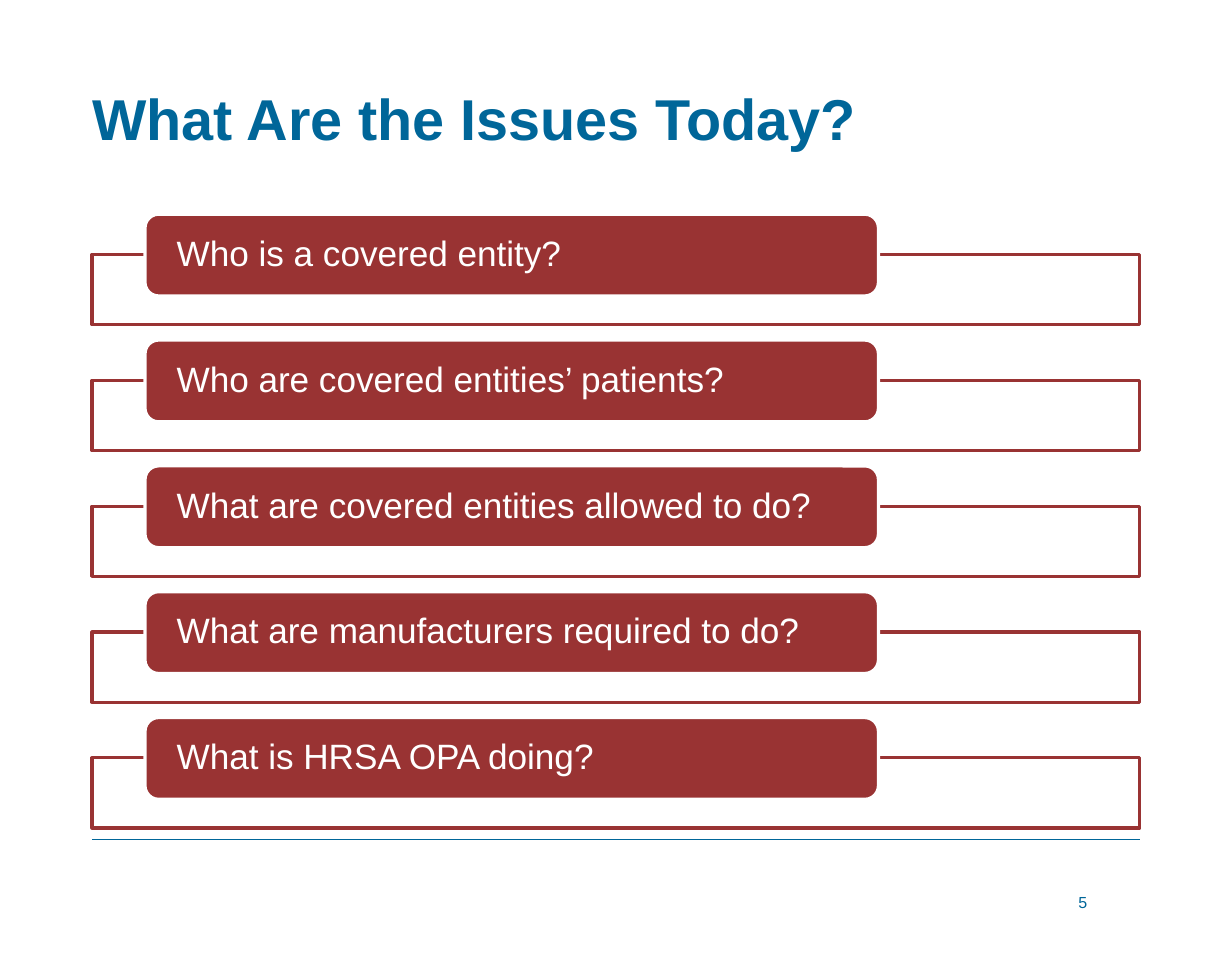
from dataclasses import dataclass

from lxml import etree
from pptx import Presentation
from pptx import util as u
from pptx.dml.color import RGBColor
from pptx.enum import shapes, text
from pptx.oxml import ns


@dataclass(frozen=True)
class Theme:
    font: str = "Arial"
    blue: str = "006699"
    red: str = "993333"
    white: str = "FFFFFF"
    title: int = 36
    body: int = 22
    small: int = 10
    rule: int = 1
    edge: int = 2


THEME = Theme()
ISSUES = [
    "Who is a covered entity?",
    "Who are covered entities’ patients?",
    "What are covered entities allowed to do?",
    "What are manufacturers required to do?",
    "What is HRSA OPA doing?",
]


def inches(*vals):
    return [u.Inches(v) for v in vals]


def write(shape, words, size, color, bold=False, align=text.PP_ALIGN.LEFT,
          anchor=text.MSO_ANCHOR.TOP, inset=(0, 0, 0, 0), space=None):
    frame = shape.text_frame
    frame.word_wrap = True
    frame.vertical_anchor = anchor
    (frame.margin_left, frame.margin_top,
     frame.margin_right, frame.margin_bottom) = inches(*inset)
    para = frame.paragraphs[0]
    para.alignment = align
    if space:
        para.line_spacing = space
    run = para.add_run()
    run.text = words
    run.font.name = THEME.font
    run.font.size = u.Pt(size)
    run.font.bold = bold
    run.font.color.rgb = RGBColor.from_string(color)


def panel(slide, kind, box, fill, line, alpha=None):
    shape = slide.shapes.add_shape(kind, *inches(*box))
    shape.shadow.inherit = False
    shape.fill.solid()
    shape.fill.fore_color.rgb = RGBColor.from_string(fill)
    shape.line.color.rgb = RGBColor.from_string(line)
    shape.line.width = u.Pt(THEME.edge)
    if alpha:
        tint = shape.fill._xPr.find(".//" + ns.qn("a:srgbClr"))
        etree.SubElement(tint, ns.qn("a:alpha"), val=str(alpha * 1000))
    return shape


def title(slide, box, words):
    label = slide.shapes.add_textbox(*inches(*box))
    write(label, words, THEME.title, THEME.blue, bold=True,
          anchor=text.MSO_ANCHOR.BOTTOM, inset=(0, 0, 0, 0.16),
          space=u.Pt(38.9))


def issues(slide, box, items):
    left, top, width, height = box
    drop, frame, tab = 0.35, 0.61, 0.71
    step = (height - drop - frame) / (len(items) - 1)
    for i, item in enumerate(items):
        y = top + i * step
        panel(slide, shapes.MSO_SHAPE.RECTANGLE,
              (left, y + drop, width, frame), THEME.white, THEME.red, alpha=90)
        pill = panel(slide, shapes.MSO_SHAPE.ROUNDED_RECTANGLE,
                     (left + 0.46, y, width * 0.7, tab),
                     THEME.red, THEME.white)
        write(pill, item, THEME.body, THEME.white,
              anchor=text.MSO_ANCHOR.MIDDLE, inset=(0.24, 0, 0.24, 0),
              space=0.9)


def footer(slide, box, number):
    left, top, width, height = box
    rule = slide.shapes.add_connector(
        shapes.MSO_CONNECTOR.STRAIGHT, *inches(left, top, left + width, top))
    rule.line.color.rgb = RGBColor.from_string(THEME.blue)
    rule.line.width = u.Pt(THEME.rule)
    etree.SubElement(rule._element.spPr, ns.qn("a:effectLst"))
    page = slide.shapes.add_textbox(
        *inches(left + 7.49, top + height - 0.44, 2.23, 0.44))
    write(page, number, THEME.small, THEME.blue, align=text.PP_ALIGN.CENTER,
          inset=(0.11, 0.05, 0.11, 0.05))


def main():
    deck = Presentation()
    deck.slide_width, deck.slide_height = inches(10.7, 8.3)
    slide = deck.slides.add_slide(deck.slide_layouts[6])
    footer(slide, (0.8, 7.29, 9.1, 0.85), "5")
    issues(slide, (0.8, 1.86, 9.1, 5.33), ISSUES)
    title(slide, (0.8, 0, 9.1, 1.48), "What Are the Issues Today?")
    deck.save("out.pptx")


if __name__ == "__main__":
    main()
